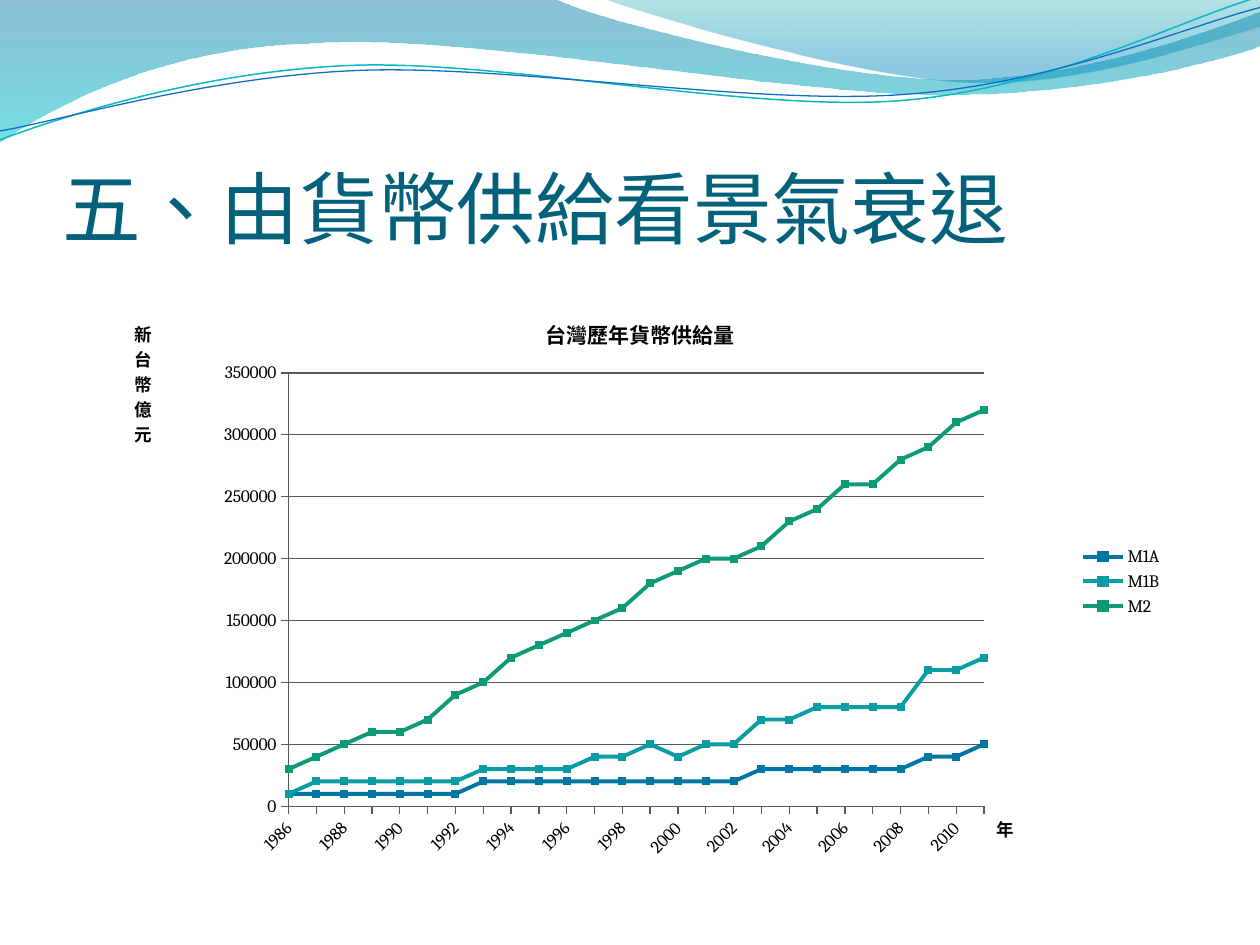
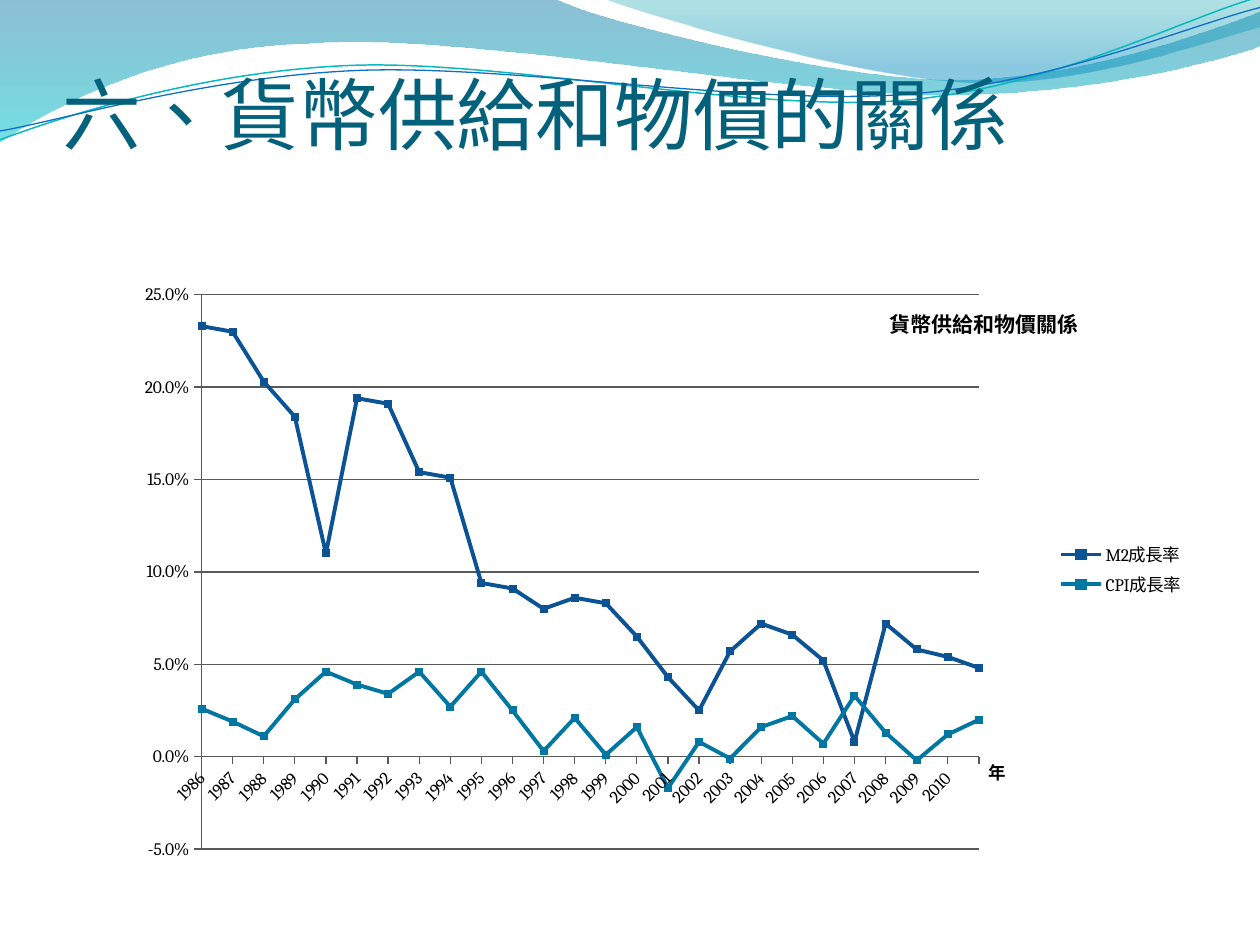
from dataclasses import dataclass
from math import cos, radians, sin
from lxml.etree import SubElement
from pptx import Presentation
from pptx.chart.data import CategoryChartData
from pptx.dml.color import RGBColor
from pptx.enum.chart import XL_CHART_TYPE as ChartType
from pptx.enum.chart import XL_LEGEND_POSITION as LegendPosition
from pptx.enum.chart import XL_MARKER_STYLE as MarkerStyle
from pptx.enum.chart import XL_TICK_MARK as TickMark
from pptx.enum.lang import MSO_LANGUAGE_ID as Language
from pptx.enum.text import MSO_ANCHOR as Anchor
from pptx.oxml import parse_xml
from pptx.oxml.ns import nsdecls, qn
from pptx.util import Inches, Pt


@dataclass(frozen=True)
class Theme:
    heading: str = "04617B"
    ink: str = "000000"
    grid: str = "595959"
    navy: str = "0F6FC6"
    blue: str = "009DD9"
    teal: str = "0BD0D9"
    green: str = "10CF9B"
    series_shade: float = -0.25
    heading_font: str = "Calibri"
    chart_font: str = "Cambria"
    heading_size: float = 45
    chart_title_size: float = 12
    chart_size: float = 10
    series_width: float = 2.25
    grid_width: float = 0.75


THEME = Theme()

BANDS = [
    {"start": (0, 0),
     "steps": [(4.4, -0.01),
               (4.76, 0.17, 6.64, 0.63, 7.58, 0.63),
               (8.53, 0.63, 9.58, 0.26, 10, 0.09),
               (10.01, 0.36),
               (9.83, 0.44, 8.7, 0.76, 7.46, 0.75),
               (6.22, 0.75, 3.82, 0.28, 2.57, 0.34),
               (1.29, 0.36, 0.46, 0.83, -0.01, 1.13),
               (0, 0)],
     "stops": [(0, "0074A1", 45), (1, "00C6CF", 55)]},
    {"start": (4.79, -0.01),
     "steps": [(5.09, 0.11, 6.82, 0.62, 7.69, 0.65),
               (8.56, 0.69, 9.61, 0.32, 10, 0.21),
               (10, 0),
               (4.79, -0.01)],
     "stops": [(0, "00A1A9", 30), (0.8, "008BBF", 45)]},
]

WAVE_TILT = -2.7
WAVES = [
    {"start": (0, 1.11),
     "steps": [(0.48, 0.93, 1.58, 0.57, 2.77, 0.52),
               (3.95, 0.47, 5.93, 0.89, 7.13, 0.8),
               (8.33, 0.71, 9.38, 0.15, 9.98, -0.02)],
     "center": (4.99, 0.57),
     "line": ("0AB8BF", 0.85)},
    {"start": (0, 1.04),
     "steps": [(0.47, 0.96, 1.64, 0.61, 2.83, 0.56),
               (4.03, 0.51, 5.97, 0.84, 7.17, 0.75),
               (8.36, 0.67, 9.41, 0.21, 10, 0.06)],
     "center": (5, 0.59),
     "line": ("0F6FC6", 0.75)},
]

SLIDES = [
    {"heading": "五、由貨幣供給看景氣衰退",
     "heading_gap": 0,
     "chart_box": (0.83, 2.33, 8.5, 4.57),
     "plot": (1.46, 0.63, 5.52, 3.44),
     "title": ("台灣歷年貨幣供給量", (3.47, 0.15), False),
     "year_at": (7.05, 4.11),
     "unit": ("新台幣億元", (0.21, 0.18)),
     "years": range(1986, 2012),
     "scale": (0, 350000, 50000),
     "format": "General",
     "factor": 10000,
     "series": [
         ("M1A", THEME.blue,
          [1, 1, 1, 1, 1, 1, 1, 2, 2, 2, 2, 2, 2,
           2, 2, 2, 2, 3, 3, 3, 3, 3, 3, 4, 4, 5]),
         ("M1B", THEME.teal,
          [1, 2, 2, 2, 2, 2, 2, 3, 3, 3, 3, 4, 4,
           5, 4, 5, 5, 7, 7, 8, 8, 8, 8, 11, 11, 12]),
         ("M2", THEME.green,
          [3, 4, 5, 6, 6, 7, 9, 10, 12, 13, 14, 15, 16,
           18, 19, 20, 20, 21, 23, 24, 26, 26, 28, 29, 31, 32]),
     ]},
    {"heading": "六、貨幣供給和物價的關係",
     "heading_gap": 0.75,
     "chart_box": (0.5, 2.12, 9, 4.8),
     "plot": (1.1, 0.22, 6.17, 4.4),
     "title": ("貨幣供給和物價關係", (6.53, 0.27), True),
     "year_at": (7.32, 3.87),
     "unit": None,
     "years": range(1986, 2011),
     "scale": (-0.05, 0.25, 0.05),
     "format": "0.0%",
     "factor": 1,
     "series": [
         ("M2成長率", THEME.navy,
          [0.233, 0.23, 0.203, 0.184, 0.11, 0.194, 0.191, 0.154, 0.151,
           0.094, 0.091, 0.08, 0.086, 0.083, 0.065, 0.043, 0.025, 0.057,
           0.072, 0.066, 0.052, 0.008, 0.072, 0.058, 0.054, 0.048]),
         ("CPI成長率", THEME.blue,
          [0.026, 0.019, 0.011, 0.031, 0.046, 0.039, 0.034, 0.046, 0.027,
           0.046, 0.025, 0.003, 0.021, 0.001, 0.016, -0.017, 0.008, -0.001,
           0.016, 0.022, 0.007, 0.033, 0.013, -0.002, 0.012, 0.02]),
     ]},
]


def rgb(value):
    return RGBColor.from_string(value)


def style_font(font, size, color, name, bold=False):
    font.size, font.name, font.bold = Pt(size), name, bold
    font.color.rgb = rgb(color)
    font.language_id = Language.TRADITIONAL_CHINESE


def style_line(line, color, width):
    line.color.rgb = rgb(color)
    line.width = Pt(width)


def turn(point, center, degrees):
    dx, dy = point[0] - center[0], point[1] - center[1]
    c, s = cos(radians(degrees)), sin(radians(degrees))
    return center[0] + dx * c - dy * s, center[1] + dx * s + dy * c


def draw_outline(slide, part, tilt=0):
    def place_point(point):
        x, y = turn(point, part.get("center", (0, 0)), -tilt)
        return Inches(x), Inches(y)

    start = place_point(part["start"])
    steps = [[place_point(step[i:i + 2]) for i in range(0, len(step), 2)]
             for step in part["steps"]]
    ends = [step[-1] for step in steps]
    builder = slide.shapes.build_freeform(*start)
    builder.add_line_segments(ends, close=ends[-1] == start)
    outline = builder.convert_to_shape()
    outline.shadow.inherit = False
    outline.rotation = tilt % 360

    left = min(x for x, _ in [start, *ends])
    top = min(y for _, y in [start, *ends])
    segments = list(outline.element.spPr.iter(qn("a:lnTo")))
    for segment, step in zip(segments, steps):
        if len(step) == 3:
            curve = parse_xml(f'<a:cubicBezTo {nsdecls("a")}/>')
            for x, y in step:
                SubElement(curve, qn("a:pt"), x=str(x - left), y=str(y - top))
            segment.getparent().replace(segment, curve)
    return outline


def draw_header(slide):
    for part in BANDS:
        band = draw_outline(slide, part)
        band.line.fill.background()
        band.fill.gradient()
        band.fill.gradient_angle = 270
        for stop, (position, color, _) in zip(band.fill.gradient_stops, part["stops"]):
            stop.position = position
            stop.color.rgb = rgb(color)
        tints = band.element.spPr.iter(qn("a:srgbClr"))
        for tint, (_, _, opacity) in zip(list(tints), part["stops"]):
            SubElement(tint, qn("a:alpha"), val=str(opacity * 1000))
    for part in WAVES:
        wave = draw_outline(slide, part, WAVE_TILT)
        wave.fill.background()
        style_line(wave.line, *part["line"])


def add_heading(slide, text, gap):
    frame = slide.shapes.add_textbox(Inches(0.5), Inches(0.77), Inches(9), Inches(1.25)).text_frame
    frame.word_wrap = True
    frame.vertical_anchor = Anchor.BOTTOM
    frame.margin_left = frame.margin_right = 0
    frame.margin_top, frame.margin_bottom = Inches(0.05), Inches(gap)
    run = frame.paragraphs[0].add_run()
    run.text = text
    style_font(run.font, THEME.heading_size, THEME.heading, THEME.heading_font)


def place(element, index, lengths, box):
    for old in element.findall(qn("c:layout")):
        element.remove(old)
    target = '<c:layoutTarget val="inner"/>' if len(lengths) == 4 else ""
    modes = "".join(f'<c:{axis}Mode val="edge"/>' for axis in "xy")
    shares = "".join(f'<c:{field} val="{length / whole:.4f}"/>'
                     for field, length, whole in zip("xywh", lengths, box[2:] * 2))
    element.insert(index, parse_xml(
        f'<c:layout {nsdecls("c")}><c:manualLayout>{target}{modes}{shares}'
        "</c:manualLayout></c:layout>"))


def write_title(title, text, at, box, size):
    run = title.text_frame.paragraphs[0].add_run()
    run.text = text
    style_font(run.font, size, THEME.ink, THEME.chart_font, True)
    place(title.element, 1, at, box)


def style_axes(chart, content):
    years, amounts = chart.category_axis, chart.value_axis
    box = content["chart_box"]
    for axis in (years, amounts):
        axis.major_tick_mark, axis.minor_tick_mark = TickMark.OUTSIDE, TickMark.NONE
        style_line(axis.format.line, THEME.grid, THEME.grid_width)
        style_font(axis.tick_labels.font, THEME.chart_size, THEME.ink, THEME.chart_font)
    years.has_major_gridlines = False
    amounts.has_major_gridlines = True
    style_line(amounts.major_gridlines.format.line, THEME.grid, THEME.grid_width)
    amounts.minimum_scale, amounts.maximum_scale, amounts.major_unit = content["scale"]
    amounts.tick_labels.number_format = content["format"]
    amounts.tick_labels.number_format_is_linked = False

    years.has_title = True
    write_title(years.axis_title, "年", content["year_at"], box, THEME.chart_size)
    if content["unit"]:
        amounts.has_title = True
        write_title(amounts.axis_title, *content["unit"], box, THEME.chart_size)
        body = next(amounts.axis_title.element.iter(qn("a:bodyPr")))
        body.set("rot", "0")
        body.set("vert", "wordArtVertRtl")

    plot_area = next(chart.element.iter(qn("c:plotArea")))
    place(plot_area, 0, content["plot"], box)
    labels = plot_area.find(f'{qn("c:catAx")}/{qn("c:txPr")}/{qn("a:bodyPr")}')
    labels.set("rot", "-2700000")
    value_axis = plot_area.find(qn("c:valAx"))
    for old in value_axis.findall(qn("c:crossBetween")):
        value_axis.remove(old)
    value_axis.find(qn("c:crosses")).addnext(
        parse_xml(f'<c:crossBetween {nsdecls("c")} val="midCat"/>'))


def add_trend_chart(slide, content):
    data = CategoryChartData(number_format=content["format"])
    data.categories = [str(year) for year in content["years"]]
    for name, _, values in content["series"]:
        data.add_series(name, [value * content["factor"] for value in values])
    box = [Inches(length) for length in content["chart_box"]]
    chart = slide.shapes.add_chart(ChartType.LINE_MARKERS, *box, data).chart
    style_font(chart.font, THEME.chart_size, THEME.ink, THEME.chart_font)

    text, at, overlay = content["title"]
    chart.has_title = True
    write_title(chart.chart_title, text, at, content["chart_box"], THEME.chart_title_size)
    chart.chart_title.element.find(qn("c:overlay")).set("val", str(int(overlay)))
    chart.has_legend = True
    chart.legend.position = LegendPosition.RIGHT
    chart.legend.include_in_layout = False

    chart.plots[0].vary_by_categories = False
    for trend, (_, color, _) in zip(chart.plots[0].series, content["series"]):
        trend.smooth = False
        trend.marker.style, trend.marker.size = MarkerStyle.SQUARE, 4
        marker = trend.marker.format
        marker.fill.solid()
        marker.fill.fore_color.rgb = rgb(color)
        style_line(trend.format.line, color, THEME.series_width)
        style_line(marker.line, color, THEME.grid_width)
        for paint in (trend.format.line.color, marker.fill.fore_color, marker.line.color):
            paint.brightness = THEME.series_shade
    style_axes(chart, content)


def main():
    deck = Presentation()
    deck.slide_width, deck.slide_height = Inches(10), Inches(7.5)
    for content in SLIDES:
        slide = deck.slides.add_slide(deck.slide_layouts[6])
        draw_header(slide)
        add_heading(slide, content["heading"], content["heading_gap"])
        add_trend_chart(slide, content)
    deck.save("out.pptx")


if __name__ == "__main__":
    main()
